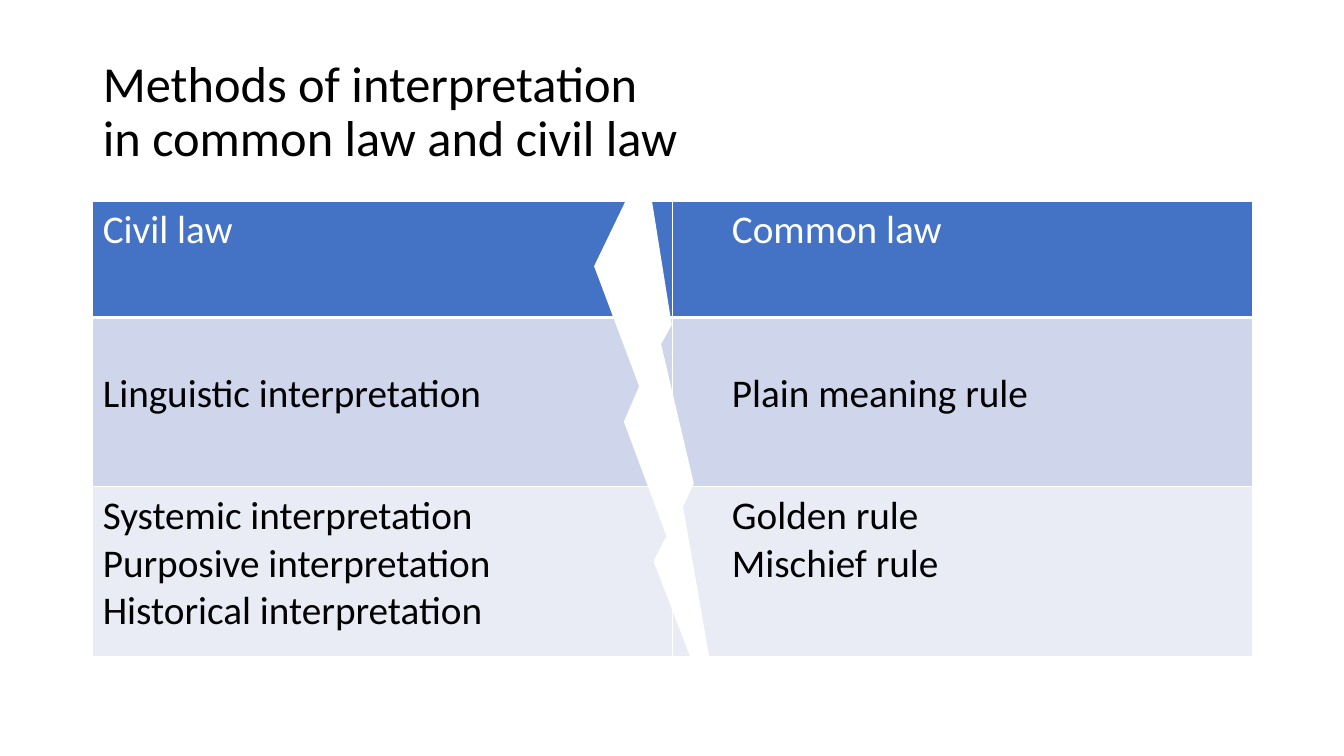
from dataclasses import dataclass

from lxml import etree
from pptx import Presentation
from pptx.dml.color import RGBColor
from pptx.enum import shapes, text
from pptx.oxml import ns
from pptx.util import Inches, Pt


@dataclass(frozen=True)
class Theme:
    font: str = "Calibri"
    title_size: int = 36
    body_size: int = 28
    black: str = "000000"
    white: str = "FFFFFF"
    header_fill: str = "4472C4"
    row_fills: tuple = ("CFD5EA", "E9EBF5")


THEME = Theme()
LINE_HEIGHT = 0.47
CELL_MARGIN = 0.05
COMMON_LAW_INDENT = 0.59

ROWS = [
    (["Civil law"], ["Common law"]),
    (["Linguistic interpretation"], ["Plain meaning rule"]),
    (["Systemic interpretation", "Purposive interpretation", "Historical interpretation"],
     ["Golden rule", "Mischief rule"]),
]
ROW_HEIGHTS = (1.15, 1.68, 1.68)


def write_text(frame, lines, *, size, color, spacing=1.0):
    """Write each line as a paragraph; a vertical tab breaks a line within one."""
    for index, line in enumerate(lines):
        paragraph = frame.paragraphs[0] if index == 0 else frame.add_paragraph()
        paragraph.text = line
        paragraph.alignment = text.PP_ALIGN.LEFT
        paragraph.line_spacing = spacing
        for run in paragraph.runs:
            run.font.name = THEME.font
            run.font.size = Pt(size)
            run.font.color.rgb = RGBColor.from_string(color)


def add_title(slide, left, top, width, height):
    title = slide.shapes.title
    title.left, title.top, title.width, title.height = map(Inches, (left, top, width, height))
    title.text_frame.vertical_anchor = text.MSO_ANCHOR.MIDDLE
    title.text_frame.word_wrap = True
    write_text(title.text_frame, ["Methods of interpretation \vin common law and civil law"],
               size=THEME.title_size, color=THEME.black, spacing=0.9)


def set_borders(cell, bottom_width):
    properties = cell._tc.get_or_add_tcPr()
    for side, width in (("L", 1), ("R", 1), ("T", 1), ("B", bottom_width)):
        line = etree.SubElement(properties, ns.qn(f"a:ln{side}"), w=str(Pt(width)))
        fill = etree.SubElement(line, ns.qn("a:solidFill"))
        etree.SubElement(fill, ns.qn("a:srgbClr"), val=THEME.white)


def add_methods_table(slide, left, top, width, height):
    frame = slide.shapes.add_table(len(ROWS), 2, *map(Inches, (left, top, width, height)))
    table = frame.table
    for column in table.columns:
        column.width = Inches(width / 2)
    fills = (THEME.header_fill, *THEME.row_fills)
    for row_index, (row, row_height) in enumerate(zip(ROWS, ROW_HEIGHTS)):
        is_header = row_index == 0
        table.rows[row_index].height = Inches(row_height)
        for column_index, lines in enumerate(row):
            cell = table.cell(row_index, column_index)
            set_borders(cell, 3 if is_header else 1)
            cell.fill.solid()
            cell.fill.fore_color.rgb = RGBColor.from_string(fills[row_index])
            if row_index == 1:
                cell.margin_top = Inches(CELL_MARGIN + LINE_HEIGHT)
            if column_index == 1:
                cell.margin_left = Inches(COMMON_LAW_INDENT)
            write_text(cell.text_frame, lines, size=THEME.body_size,
                       color=THEME.white if is_header else THEME.black)


def add_dividing_bolt(slide, left, top, width, height):
    bolt = slide.shapes.add_shape(shapes.MSO_SHAPE.LIGHTNING_BOLT,
                                  *map(Inches, (left, top, width, height)))
    bolt.shadow.inherit = False
    white = RGBColor.from_string(THEME.white)
    bolt.fill.solid()
    bolt.fill.fore_color.rgb = white
    bolt.line.color.rgb = white
    bolt.line.width = Pt(1)


def main():
    presentation = Presentation()
    presentation.slide_width = Inches(13.33)
    presentation.slide_height = Inches(7.5)
    slide = presentation.slides.add_slide(presentation.slide_layouts.get_by_name("Title Only"))
    add_title(slide, 0.92, 0.4, 11.5, 1.45)
    add_methods_table(slide, 0.92, 2, 11.5, sum(ROW_HEIGHTS))
    add_dividing_bolt(slide, 5.9, 1.61, 1.27, 5.73)
    presentation.save("out.pptx")


if __name__ == "__main__":
    main()
